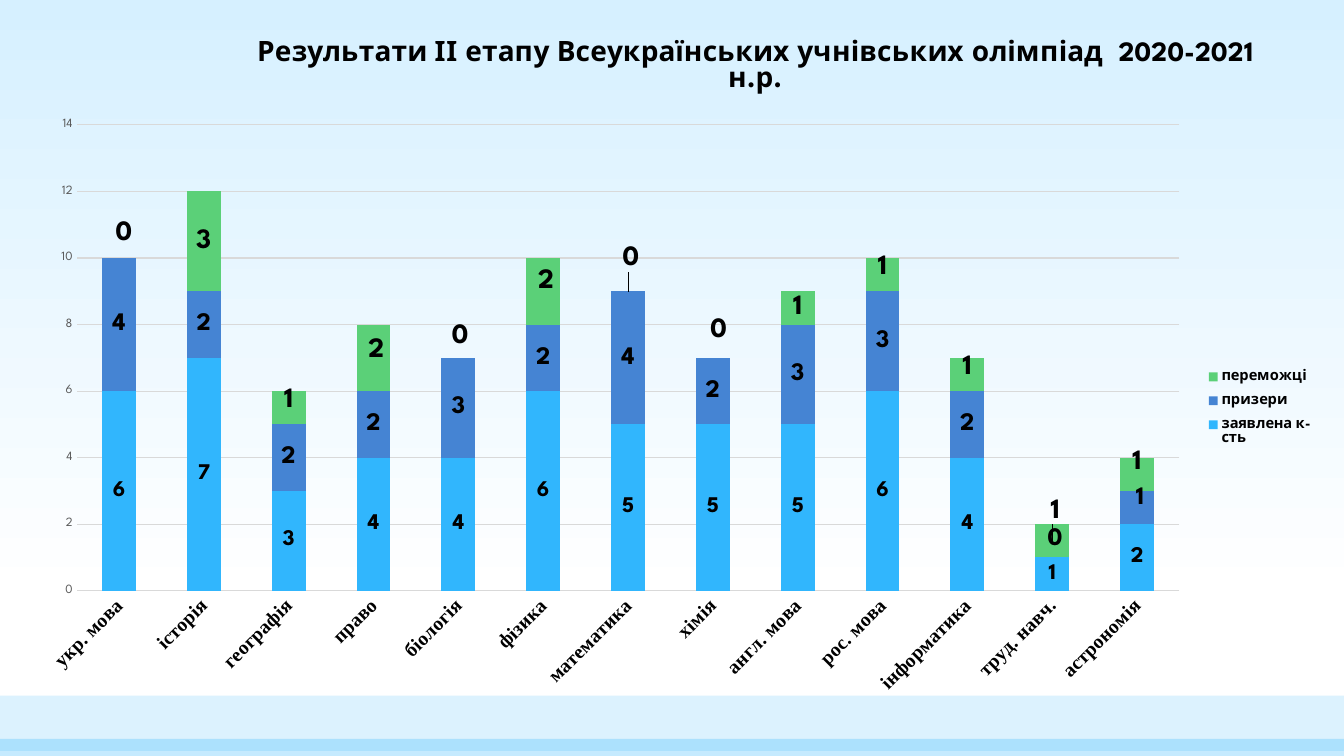
from lxml import etree
from pptx import Presentation
from pptx.chart.data import CategoryChartData
from pptx.dml.color import RGBColor
from pptx.enum.chart import XL_CHART_TYPE, XL_LABEL_POSITION, XL_LEGEND_POSITION, XL_TICK_MARK
from pptx.enum.shapes import MSO_SHAPE
from pptx.oxml.ns import qn
from pptx.util import Inches, Pt

STACKED = XL_CHART_TYPE.COLUMN_STACKED
CENTER = XL_LABEL_POSITION.CENTER
LEGEND_RIGHT = XL_LEGEND_POSITION.RIGHT
NO_TICKS = XL_TICK_MARK.NONE
RECTANGLE = MSO_SHAPE.RECTANGLE

TITLE = "Результати ІІ етапу Всеукраїнських учнівських олімпіад  2020-2021 н.р."
SUBJECTS = ["укр. мова", "історія", "географія", "право", "біологія", "фізика",
            "математика", "хімія", "англ. мова", "рос. мова", "інформатика",
            "труд. навч.", "астрономія"]
# name, colour, label size, values, label shifts in inches by subject index
SERIES = [
    ("заявлена к-сть", "31B6FD", 16, [6, 7, 3, 4, 4, 6, 5, 5, 5, 6, 4, 1, 2], {}),
    ("призери", "4584D3", 18, [4, 2, 2, 2, 3, 2, 4, 2, 3, 3, 2, 0, 1],
     {11: (0.03, -0.18), 12: (0.03, -0.09)}),
    ("переможці", "5BD078", 20, [0, 3, 1, 2, 0, 2, 0, 0, 1, 1, 1, 1, 1],
     {0: (0.05, -0.24), 2: (0, -0.07), 3: (0.03, -0.07), 4: (0.02, -0.21),
      5: (0.03, -0.09), 6: (0.03, -0.32), 7: (0.06, -0.27), 9: (0, -0.07),
      10: (0, -0.07), 11: (0.03, -0.29), 12: (0, -0.11)}),
]
BANDS = [(6.9, 0.55, 17), (7.33, 0.17, 28)]  # top, height, opacity in percent
BACKGROUND = [(0, "D6F0FF"), (0.79, "FFFFFF")]
WIDTH, HEIGHT = 13.33, 7.5
CHART_LEFT, CHART_TOP, CHART_WIDTH, CHART_HEIGHT = 0.24, 0.24, 12.92, 6.79
TITLE_CORNER = (2.5, 0.33)
PLOT_BOX = (0.76, 1.24, 10.94, 4.62)
LEGEND_BOX = (11.93, 3.57, 1.13, 0.95)


def color(value):
    return RGBColor.from_string(value)


def format_font(font, size, bold=False, value="000000", name="League Spartan"):
    font.size = Pt(size)
    font.bold = bold
    font.name = name
    font.color.rgb = color(value)


def write_title(chart, text, **text_format):
    run = chart.chart_title.text_frame.paragraphs[0].add_run()
    run.text = text
    format_font(run.font, **text_format)


def make_layout(horizontal, vertical, size=None, mode="edge", target=None):
    """Build a manual chart layout from lengths in inches."""
    layout = etree.Element(qn("c:layout"))
    manual = etree.SubElement(layout, qn("c:manualLayout"))
    settings = [("layoutTarget", target)] if target else []
    settings += [(tag, mode) for tag in ("xMode", "yMode") if mode]
    settings += [("x", horizontal / CHART_WIDTH), ("y", vertical / CHART_HEIGHT)]
    if size:
        settings += [("w", size[0] / CHART_WIDTH), ("h", size[1] / CHART_HEIGHT)]
    for tag, value in settings:
        text = value if isinstance(value, str) else f"{value:.4f}"
        etree.SubElement(manual, qn("c:" + tag)).set("val", text)
    return layout


def place(element, layout, after=None):
    """Replace an element's layout, putting the new one after a named child."""
    for old in element.findall(qn("c:layout")):
        element.remove(old)
    if after is None:
        element.insert(0, layout)
    else:
        element.find(qn(after)).addnext(layout)


def box_layout(box, target=None):
    left, top, width, height = box
    return make_layout(left - CHART_LEFT, top - CHART_TOP, (width, height), target=target)


def add_band(slide, top, height, opacity):
    band = slide.shapes.add_shape(RECTANGLE, 0, Inches(top), Inches(WIDTH), Inches(height))
    band.shadow.inherit = False
    band.line.fill.background()
    band.fill.solid()
    band.fill.fore_color.rgb = color("31B6FD")
    fill_color = band.fill._xPr.find(".//" + qn("a:srgbClr"))
    etree.SubElement(fill_color, qn("a:alpha")).set("val", str(opacity * 1000))


def format_series(series, fill, label_size, shifts):
    series.format.fill.solid()
    series.format.fill.fore_color.rgb = color(fill)
    labels = series.data_labels
    labels.show_value = True
    labels.position = CENTER
    format_font(labels.font, label_size, bold=True)
    for index, (right, down) in shifts.items():
        label = series.points[index].data_label
        format_font(label.font, label_size, bold=True)
        label.position = CENTER
        element = series._element.xpath(f"c:dLbls/c:dLbl[c:idx/@val='{index}']")[0]
        place(element, make_layout(right, down, mode=None), after="c:idx")


def format_axes(chart):
    subjects, values = chart.category_axis, chart.value_axis
    for axis in (subjects, values):
        axis.major_tick_mark = axis.minor_tick_mark = NO_TICKS
        axis.format.line.fill.background()
    format_font(subjects.tick_labels.font, 14, bold=True, name="Times New Roman")
    subjects._element.find(qn("c:txPr")).find(qn("a:bodyPr")).set("rot", "-2700000")
    format_font(values.tick_labels.font, 9, value="595959")
    values.minimum_scale, values.maximum_scale, values.major_unit = 0, 14, 2
    values.has_major_gridlines = True
    grid = values.major_gridlines.format.line
    grid.color.rgb = color("D9D9D9")
    grid.width = Pt(0.75)


def add_results_chart(slide):
    data = CategoryChartData()
    data.categories = SUBJECTS
    for name, _, _, values, _ in SERIES:
        data.add_series(name, values)
    frame = slide.shapes.add_chart(STACKED, Inches(CHART_LEFT), Inches(CHART_TOP),
                                   Inches(CHART_WIDTH), Inches(CHART_HEIGHT), data)
    chart = frame.chart
    format_font(chart.font, 10)
    chart.has_title = True
    write_title(chart, TITLE, size=20, bold=True)
    left, top = TITLE_CORNER
    place(chart.chart_title._element, make_layout(left - CHART_LEFT, top - CHART_TOP),
          after="c:tx")
    chart.chart_title.include_in_layout = False

    plot = chart.plots[0]
    plot.gap_width, plot.overlap = 150, 100
    plot.vary_by_categories = False
    for series, (_, fill, label_size, _, shifts) in zip(plot.series, SERIES):
        format_series(series, fill, label_size, shifts)
    format_axes(chart)

    chart.has_legend = True
    chart.legend.position = LEGEND_RIGHT
    chart.legend.include_in_layout = False
    format_font(chart.legend.font, 10.5, bold=True)
    place(chart.legend._element, box_layout(LEGEND_BOX), after="c:legendPos")
    place(chart._chartSpace.find(".//" + qn("c:plotArea")), box_layout(PLOT_BOX, "inner"))


def main():
    presentation = Presentation()
    presentation.slide_width = Inches(WIDTH)
    presentation.slide_height = Inches(HEIGHT)
    slide = presentation.slides.add_slide(presentation.slide_layouts[6])
    fill = slide.background.fill
    fill.gradient()
    fill.gradient_angle = 270
    for stop, (position, value) in zip(fill.gradient_stops, BACKGROUND):
        stop.position = position
        stop.color.rgb = color(value)
    for band in BANDS:
        add_band(slide, *band)
    add_results_chart(slide)
    presentation.save("out.pptx")


if __name__ == "__main__":
    main()
